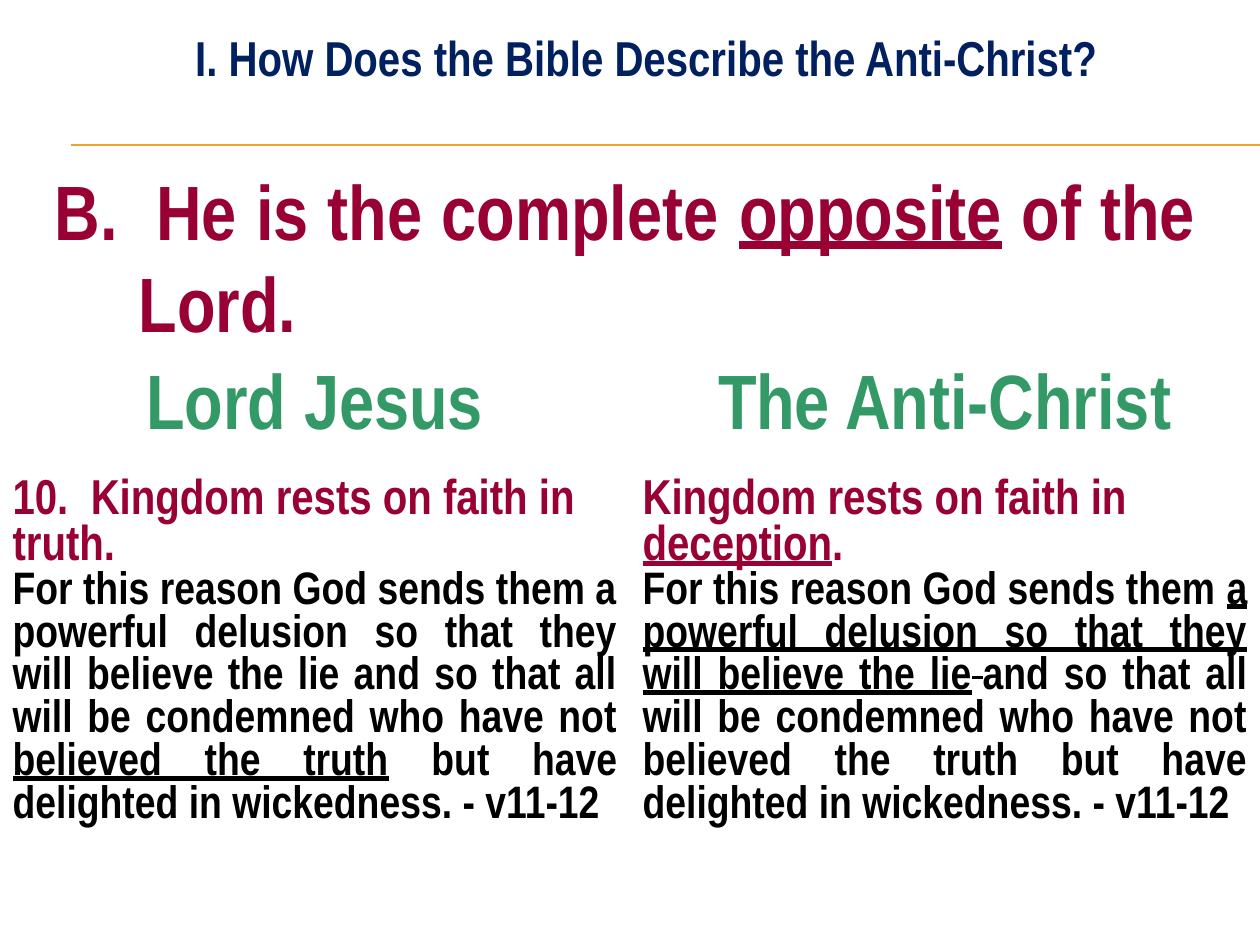
from lxml.etree import SubElement
from pptx import Presentation
from pptx.dml.color import RGBColor
from pptx.enum.shapes import MSO_CONNECTOR
from pptx.enum.text import MSO_ANCHOR, MSO_AUTO_SIZE, PP_ALIGN
from pptx.oxml.ns import qn
from pptx.util import Cm, Pt

RED, GREEN, NAVY, GOLD, BLACK = "990033", "339966", "002060", "F0A22E", "000000"
VERSE = "For this reason God sends them "
DELUSION = "a powerful delusion so that they will believe the lie"
FIXED_SPACE = " "  # no-break space
CONDEMNED = "and so that all will be condemned who have not "
TRUTH = "believed the truth"
ENDING = " but have delighted in wickedness. - v11-12"


def color(hex_string):
    return RGBColor.from_string(hex_string)


def add_run(p, text, size=28, fill=RED, underline=False, raised=False):
    r = p.add_run()
    r.text = text
    f = r.font
    f.name, f.size, f.bold, f.underline = "Arial Narrow", Pt(size), True, underline
    f.color.rgb = color(fill)
    if raised:
        r._r.get_or_add_rPr().set("baseline", "30000")


def write(p, parts, align=PP_ALIGN.LEFT, **fmt):
    """Fill a paragraph; each part is a string or (string, extra format)."""
    p.alignment, p.space_before = align, Pt(0)
    for part in parts:
        text, extra = (part, {}) if isinstance(part, str) else part
        add_run(p, text, **{**fmt, **extra})


def place(sp, left, top, width, height):
    sp.left, sp.top, sp.width, sp.height = Cm(left), Cm(top), Cm(width), Cm(height)
    tf = sp.text_frame
    tf.word_wrap, tf.auto_size = True, MSO_AUTO_SIZE.NONE
    tf.vertical_anchor = MSO_ANCHOR.TOP
    return tf.paragraphs[0]


def add_title(s, *box):
    p = place(s.shapes.title, *box)
    write(p, ["I. How Does the Bible Describe the Anti-Christ?"],
          align=PP_ALIGN.CENTER, fill=NAVY)


def add_point(s, *box):
    p = place(s.placeholders[1], *box)
    pPr = p._p.get_or_add_pPr()
    pPr.set("marL", str(Cm(1.69)))
    pPr.set("indent", str(-Cm(1.69)))
    SubElement(pPr, qn("a:buNone"))
    write(p, ["B.  He is the complete ", ("opposite", {"underline": True}),
              " of the Lord."], align=PP_ALIGN.JUSTIFY, size=44)


def add_rule(s, left, top, right, gap):
    """Draw a double rule."""
    for y in (top, top + gap):
        line = s.shapes.add_connector(MSO_CONNECTOR.STRAIGHT,
                                      Cm(left), Cm(y), Cm(right), Cm(y))
        line.line.color.rgb, line.line.width = color(GOLD), Pt(0.75)
        SubElement(line._element.spPr, qn("a:effectLst"))


def add_comparison(s, left, top, width, heights):
    under = {"underline": True}
    columns = [
        ("Lord Jesus",
         ["10.  Kingdom rests on faith in truth."],
         [VERSE + DELUSION + FIXED_SPACE + CONDEMNED, (TRUTH, under), ENDING]),
        ("The Anti-Christ",
         ["Kingdom rests on faith in ", ("deception", under), "."],
         [VERSE, (DELUSION, under), (FIXED_SPACE, {**under, "raised": True}),
          CONDEMNED + TRUTH + ENDING]),
    ]
    table = s.shapes.add_table(2, len(columns), Cm(left), Cm(top),
                               Cm(width), Cm(sum(heights))).table
    table.first_row = table.horz_banding = False
    for row, height in zip(table.rows, heights):
        row.height = Cm(height)
    for cell in table.iter_cells():
        cell.fill.background()
    for i, (heading, claim, verse) in enumerate(columns):
        write(table.cell(0, i).text_frame.paragraphs[0], [heading],
              align=PP_ALIGN.CENTER, size=44, fill=GREEN)
        tf = table.cell(1, i).text_frame
        write(tf.paragraphs[0], claim)
        write(tf.add_paragraph(), verse, align=PP_ALIGN.JUSTIFY,
              size=26, fill=BLACK)


def main():
    prs = Presentation()
    prs.slide_width, prs.slide_height = Cm(25.4), Cm(19.05)
    s = prs.slides.add_slide(prs.slide_layouts[1])
    add_title(s, 2.12, 0.43, 21.8, 1.45)
    add_point(s, 0.85, 3.17, 23.5, 15.03)
    add_rule(s, 1.43, 2.92, 25.4, 0.02)
    add_comparison(s, 0, 7.41, 25.4, (2.12, 9.23))
    prs.save("out.pptx")


if __name__ == "__main__":
    main()
